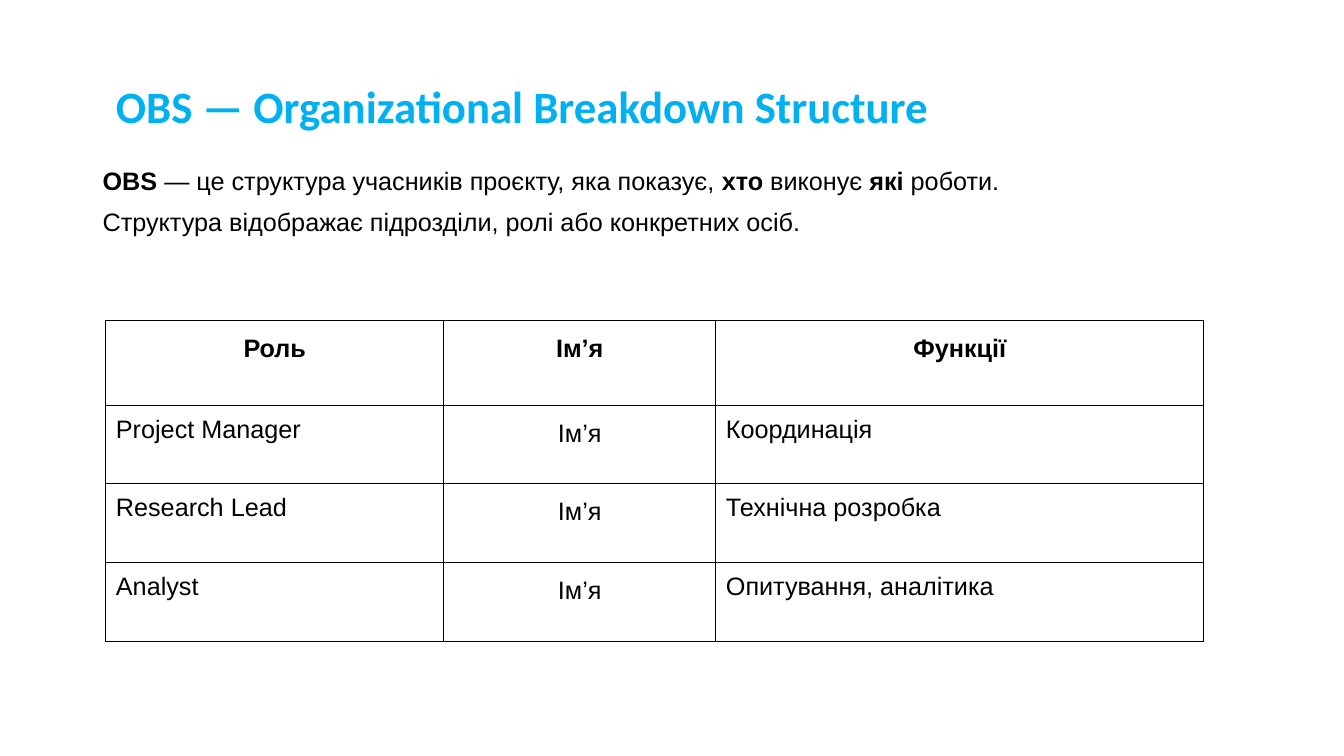
from lxml.etree import SubElement
from pptx import Presentation
from pptx.dml.color import RGBColor
from pptx.enum.text import MSO_ANCHOR, PP_ALIGN
from pptx.oxml.ns import qn
from pptx.util import Inches, Pt

TITLE = "OBS — Organizational Breakdown Structure"
INTRO = [
    [("OBS", True), (" — це структура учасників проєкту, яка показує, ", False),
     ("хто", True), (" виконує ", False), ("які", True), (" роботи.", False)],
    [("Структура відображає підрозділи, ролі або конкретних осіб.", False)],
]
ROLES = [
    ("Роль", "Ім’я", "Функції"),
    ("Project Manager", "Ім’я", "Координація"),
    ("Research Lead", "Ім’я", "Технічна розробка"),
    ("Analyst", "Ім’я", "Опитування, аналітика"),
]
COL_WIDTHS = [3.35, 2.7, 4.84]
ROW_HEIGHTS = [0.84, 0.78, 0.78, 0.78]
NAME_COL = 1
COLORS = {"title": "00B0F0", "text": "000000", "border": "000000"}


def style_run(r, size, font, color, bold):
    r.font.size = Pt(size)
    r.font.name = font
    r.font.bold = bold
    r.font.color.rgb = RGBColor.from_string(COLORS[color])


def set_insets(tf, x, y):
    tf.margin_left = tf.margin_right = Inches(x)
    tf.margin_top = tf.margin_bottom = Inches(y)


def set_borders(cell):
    tc_pr = cell._tc.get_or_add_tcPr()
    for side in ("a:lnL", "a:lnR", "a:lnT", "a:lnB"):
        ln = SubElement(tc_pr, qn(side), w=str(Pt(0.75)))
        fill = SubElement(ln, qn("a:solidFill"))
        SubElement(fill, qn("a:srgbClr"), val=COLORS["border"])


def add_title(slide):
    sp = slide.shapes.title
    sp.left, sp.top, sp.width, sp.height = map(Inches, (1.05, 0.55, 11.5, 1.07))
    tf = sp.text_frame
    tf.text = TITLE
    tf.vertical_anchor = MSO_ANCHOR.MIDDLE
    set_insets(tf, 0.1, 0.05)
    p = tf.paragraphs[0]
    p.alignment = PP_ALIGN.LEFT
    p.line_spacing = 0.9
    style_run(p.runs[0], 32, "Calibri", "title", True)


def add_intro(slide):
    tf = slide.shapes.add_textbox(*map(Inches, (0.92, 1.62, 11.5, 1.07))).text_frame
    tf.word_wrap = True
    set_insets(tf, 0.1, 0.05)
    for i, parts in enumerate(INTRO):
        p = tf.add_paragraph() if i else tf.paragraphs[0]
        p.line_spacing = 0.9
        p.space_before = Pt(10)
        for text, bold in parts:
            r = p.add_run()
            r.text = text
            style_run(r, 18, "Arial", "text", bold)


def add_roles(slide):
    table = slide.shapes.add_table(
        len(ROLES), len(COL_WIDTHS), Inches(1.05), Inches(3.18),
        Inches(sum(COL_WIDTHS)), Inches(sum(ROW_HEIGHTS))).table
    table.first_row = table.horz_banding = False
    for col, width in zip(table.columns, COL_WIDTHS):
        col.width = Inches(width)
    for row, height in zip(table.rows, ROW_HEIGHTS):
        row.height = Inches(height)
    for i, texts in enumerate(ROLES):
        for j, text in enumerate(texts):
            cell = table.cell(i, j)
            set_borders(cell)
            cell.fill.background()
            set_insets(cell, 0.1, 0.1)
            cell.text_frame.text = text
            p = cell.text_frame.paragraphs[0]
            if i == 0 or j == NAME_COL:
                p.alignment = PP_ALIGN.CENTER
                p.line_spacing = 1.15
            style_run(p.runs[0], 18, "Arial", "text", i == 0)


def main():
    prs = Presentation()
    prs.slide_width, prs.slide_height = Inches(13.33), Inches(7.5)
    slide = prs.slides.add_slide(prs.slide_layouts[5])
    add_title(slide)
    add_intro(slide)
    add_roles(slide)
    prs.save("out.pptx")


if __name__ == "__main__":
    main()
